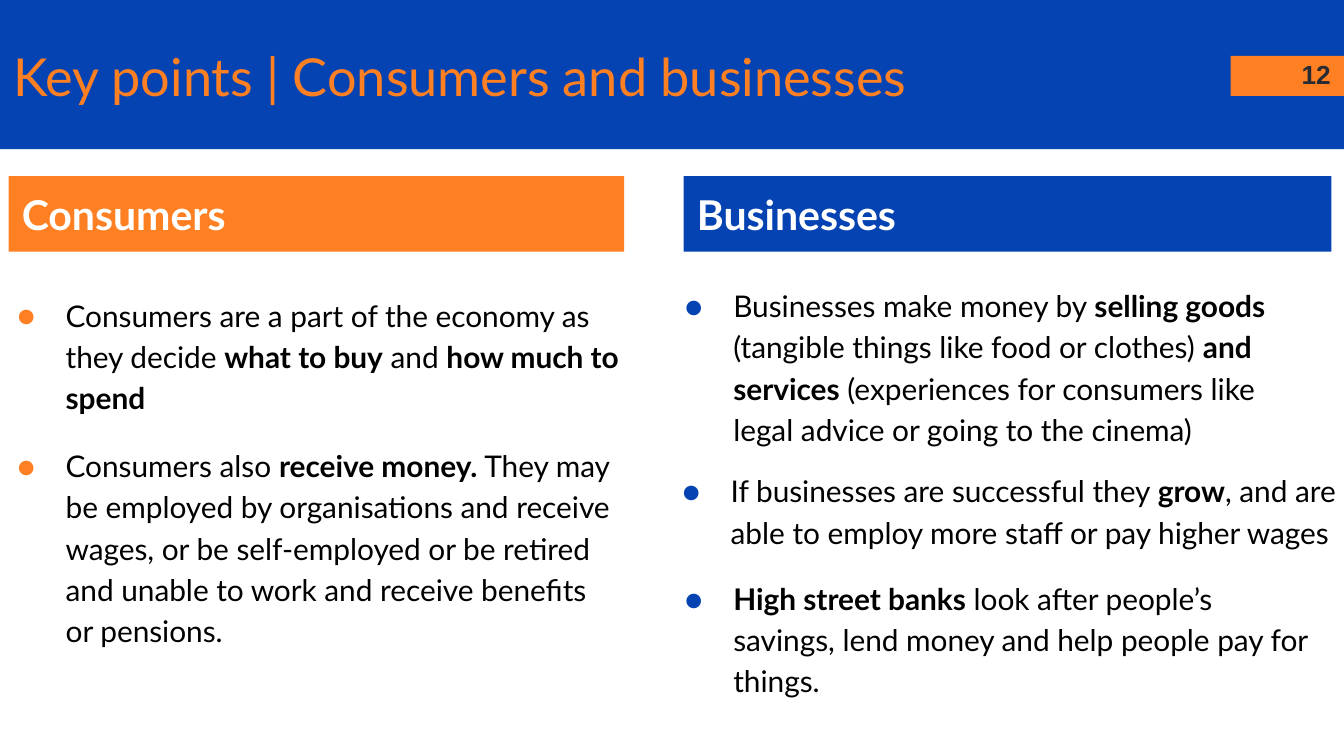
import pptx
import pptx.util
import pptx.dml.color
import pptx.enum.shapes
import pptx.enum.text
import pptx.oxml.ns
import lxml.etree

Pt = pptx.util.Pt
RGBColor = pptx.dml.color.RGBColor
Anchor = pptx.enum.text.MSO_ANCHOR
Align = pptx.enum.text.PP_ALIGN

BLUE = RGBColor(0x05, 0x43, 0xB3)
ORANGE = RGBColor(0xFF, 0x80, 0x22)
WHITE = RGBColor(0xFF, 0xFF, 0xFF)
BLACK = RGBColor(0, 0, 0)
DARK = RGBColor(0x26, 0x2A, 0x33)

SLIDE_SIZE = (720, 405)
INSET = 7.2
BULLET_INDENT = 36
BULLET_HANGING = 25.9

TITLE_FORMAT = {"name": "Lato", "size": Pt(28)}
HEADING_FORMAT = {"name": "Lato", "size": Pt(22), "bold": True}
BODY_FORMAT = {"name": "Lato", "size": Pt(16)}
NUMBER_FORMAT = {"name": "Arial", "size": Pt(14), "bold": True}

TITLE = "Key points | Consumers and businesses"
PAGE_NUMBER = "12"
BANDS = [((0, 0, 720, 80), BLUE), ((659.3, 30, 60.7, 21.5), ORANGE)]

COLUMNS = [
    {
        "heading": "Consumers",
        "color": ORANGE,
        "heading_box": (4.6, 94.3, 329.8, 40.5),
        "points": [
            ((-7.9, 149.2, 347, 78.5),
             "Consumers are a part of the economy as they decide **what to buy** and **how much to spend**"),
            ((-7.9, 229.9, 342, 123),
             "Consumers also **receive money.** They may be employed by organisations and receive wages, "
             "or be self-employed or be retired and unable to work and receive benefits or pensions."),
        ],
    },
    {
        "heading": "Businesses",
        "color": BLUE,
        "heading_box": (366.3, 94.3, 347, 40.5),
        "points": [
            ((349.8, 144.2, 365, 101),
             "Businesses make money by **selling goods **(tangible things like food or clothes) "
             "**and services** (experiences for consumers like legal advice or going to the cinema)"),
            ((348.4, 243.4, 383.8, 56),
             "If businesses are successful they **grow**, and are able to employ more staff or pay higher wages"),
            ((349.8, 301.1, 365, 93),
             "**High street banks** look after people’s savings, lend money and help people pay for things."),
        ],
    },
]


def add_band(slide, box, color):
    shape = slide.shapes.add_shape(
        pptx.enum.shapes.MSO_SHAPE.RECTANGLE, *map(Pt, box))
    shape.shadow.inherit = False
    shape.fill.solid()
    shape.fill.fore_color.rgb = color
    shape.line.fill.background()
    return shape


def add_text_box(slide, box):
    return slide.shapes.add_textbox(*map(Pt, box))


def add_bullet(paragraph, color):
    properties = paragraph._p.get_or_add_pPr()
    properties.set("marL", str(Pt(BULLET_INDENT)))
    properties.set("indent", str(-Pt(BULLET_HANGING)))
    qualified = pptx.oxml.ns.qn
    bullet_color = lxml.etree.SubElement(properties, qualified("a:buClr"))
    lxml.etree.SubElement(bullet_color, qualified("a:srgbClr"), val=str(color))
    lxml.etree.SubElement(properties, qualified("a:buFont"), typeface="Lato")
    lxml.etree.SubElement(properties, qualified("a:buChar"), char="●")


def write_text(shape, text, format_values, color, anchor=Anchor.TOP,
               align=Align.LEFT, bullet_color=None):
    frame = shape.text_frame
    frame.word_wrap = True
    frame.vertical_anchor = anchor
    for side in ("left", "top", "right", "bottom"):
        setattr(frame, f"margin_{side}", Pt(INSET))
    paragraph = frame.paragraphs[0]
    paragraph.alignment = align
    if bullet_color is not None:
        add_bullet(paragraph, bullet_color)
        paragraph.line_spacing = 1.15
    for index, part in enumerate(text.split("**")):
        if not part:
            continue
        run = paragraph.add_run()
        run.text = part
        for name, value in format_values.items():
            setattr(run.font, name, value)
        run.font.color.rgb = color
        if index % 2:
            run.font.bold = True


def main():
    presentation = pptx.Presentation()
    presentation.slide_width, presentation.slide_height = map(Pt, SLIDE_SIZE)
    slide = presentation.slides.add_slide(presentation.slide_layouts[6])

    for box, color in BANDS:
        add_band(slide, box, color)
    write_text(add_text_box(slide, (676.8, 24.1, 43.2, 31)), PAGE_NUMBER,
               NUMBER_FORMAT, DARK, align=Align.RIGHT)
    write_text(add_text_box(slide, (0, 20.5, 627.8, 40.3)), TITLE,
               TITLE_FORMAT, ORANGE, Anchor.MIDDLE)

    for column in COLUMNS:
        heading = add_band(slide, column["heading_box"], column["color"])
        write_text(heading, column["heading"], HEADING_FORMAT, WHITE, Anchor.MIDDLE)
        for box, text in column["points"]:
            write_text(add_text_box(slide, box), text, BODY_FORMAT, BLACK,
                       bullet_color=column["color"])

    presentation.save("out.pptx")


if __name__ == "__main__":
    main()
